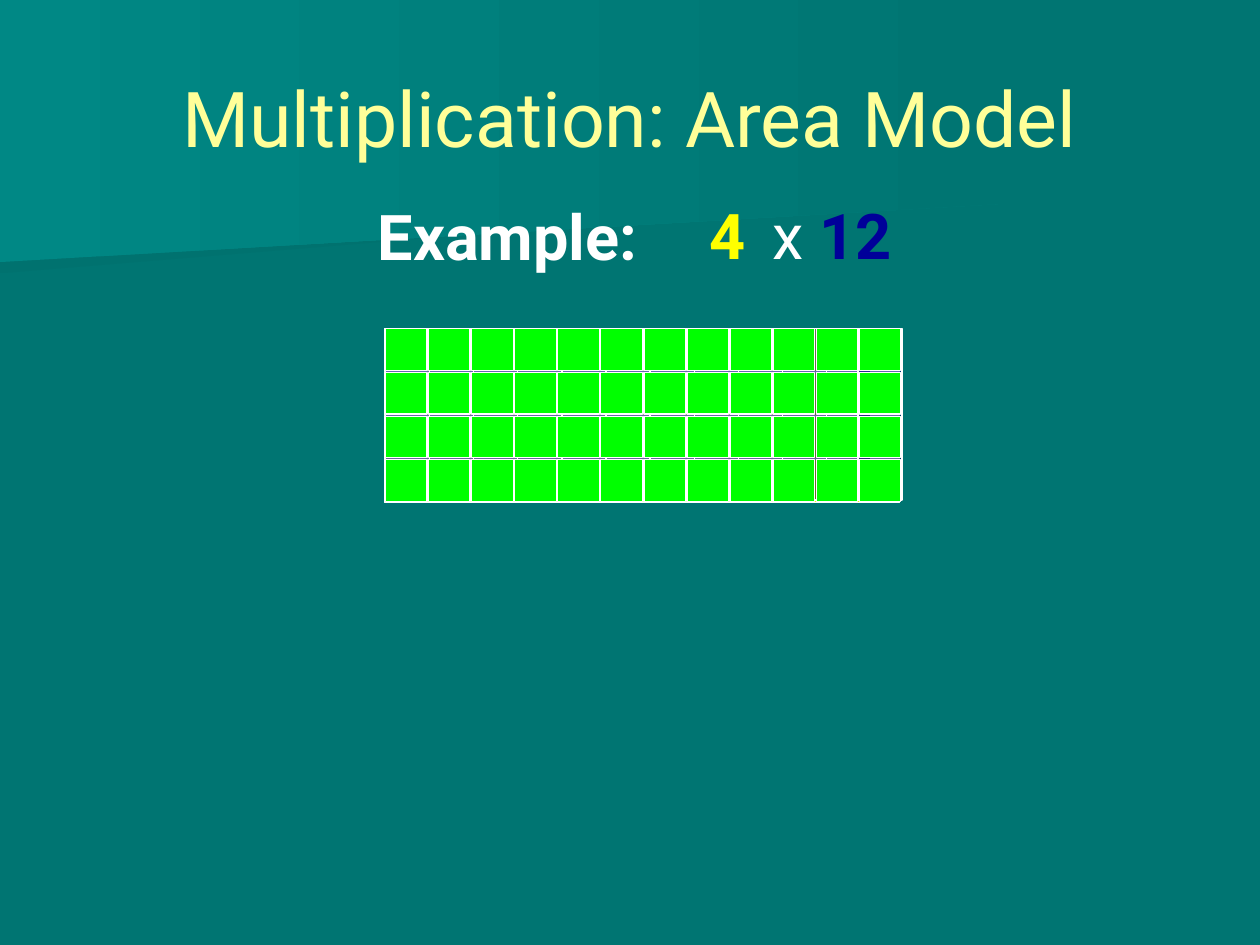
from pptx import Presentation
from pptx.dml.color import RGBColor
from pptx.enum.shapes import MSO_SHAPE
from pptx.enum.text import MSO_ANCHOR, MSO_AUTO_SIZE, PP_ALIGN
from pptx.oxml.ns import qn
from pptx.util import Inches, Pt
from lxml import etree

ROWS, COLS = 4, 12
LEFT, TOP = 3.06, 2.61
CELL = 0.33
STEP_X = (6.82 - LEFT) / (COLS - 1)
STEP_Y = (3.65 - TOP) / (ROWS - 1)
WHITE, YELLOW, GREEN, NAVY = "FFFFFF", "FFFF00", "00FF00", "000099"


def color(code):
    return RGBColor.from_string(code)


def fade(shape, first, last, angle=0, alpha=None):
    """Fill with a two-colour gradient; alpha is opacity in percent."""
    shape.fill.gradient()
    shape.fill.gradient_angle = angle
    for stop, code in zip(shape.fill.gradient_stops, (first, last)):
        stop.color.rgb = color(code)
    if alpha is not None:
        for node in shape._element.spPr.iter(qn("a:srgbClr")):
            etree.SubElement(node, qn("a:alpha")).set("val", str(alpha * 1000))


def add_band(slide, points, first, last):
    """Draw a background polygon with a left-to-right gradient."""
    start, *rest = points
    form = slide.shapes.build_freeform(
        Inches(start[0]), Inches(start[1]), scale=1.0)
    form.add_line_segments([(Inches(x), Inches(y)) for x, y in rest])
    shape = form.convert_to_shape()
    shape.shadow.inherit = False
    fade(shape, first, last)
    shape.line.fill.background()


def add_box(slide, x, y, w, h, fill=None):
    shape = slide.shapes.add_shape(
        MSO_SHAPE.RECTANGLE, Inches(x), Inches(y), Inches(w), Inches(h))
    shape.shadow.inherit = False
    if fill:
        shape.fill.solid()
        shape.fill.fore_color.rgb = color(fill)
    else:
        fade(shape, NAVY, "000047", angle=270, alpha=60)
    shape.line.color.rgb = color(WHITE)
    shape.line.width = Pt(0.75)


def add_text(slide, x, y, w, h, runs, size=36, align=PP_ALIGN.LEFT,
             anchor=MSO_ANCHOR.TOP, wrap=True, fit=MSO_AUTO_SIZE.SHAPE_TO_FIT_TEXT):
    """Write runs given as (text, colour, bold)."""
    box = slide.shapes.add_textbox(Inches(x), Inches(y), Inches(w), Inches(h))
    frame = box.text_frame
    frame.word_wrap = wrap
    frame.auto_size = fit
    frame.vertical_anchor = anchor
    para = frame.paragraphs[0]
    para.alignment = align
    for text, code, bold in runs:
        run = para.add_run()
        run.text = text
        run.font.name = "Roboto"
        run.font.size = Pt(size)
        run.font.bold = bold
        run.font.color.rgb = color(code)


def add_grid(slide):
    """Lay yellow rows, then blue columns, each covered by green cells."""
    for row in range(ROWS):
        add_box(slide, LEFT - 0.01, TOP + row * STEP_Y, 4.09, 0.34, YELLOW)
    for col in range(COLS):
        add_box(slide, min(LEFT + col * 0.35, 6.81), TOP, 0.35, 1.36)
        for row in range(ROWS):
            add_box(slide, LEFT + col * STEP_X, TOP + row * STEP_Y,
                    CELL, CELL, GREEN)


def main():
    deck = Presentation()
    deck.slide_width, deck.slide_height = Inches(10), Inches(7.5)
    slide = deck.slides.add_slide(deck.slide_layouts[6])
    slide.background.fill.solid()
    slide.background.fill.fore_color.rgb = color("007572")

    add_band(slide, [(7.78, 1.53), (0, 2.17), (0, 1.01), (7.79, 1.01),
                     (7.78, 1.28)], "00726F", "007572")
    add_band(slide, [(7.92, 1.62), (0, 2.08), (0, 0), (7.92, 0)],
             "008885", "007572")

    add_text(slide, 0.5, 0.3, 9, 1.25,
             [("Multiplication: Area Model", "FFFF99", False)], size=44,
             align=PP_ALIGN.CENTER, anchor=MSO_ANCHOR.MIDDLE,
             fit=MSO_AUTO_SIZE.NONE)
    add_text(slide, 2.9, 1.52, 2.53, 0.7, [("Example:", WHITE, True)],
             wrap=False)
    add_text(slide, 6.03, 1.51, 1.45, 0.7,
             [("x ", WHITE, False), ("12", NAVY, True)])
    add_text(slide, 5.53, 1.51, 0.99, 0.7, [("4", YELLOW, True)])
    add_grid(slide)
    deck.save("out.pptx")


if __name__ == "__main__":
    main()
